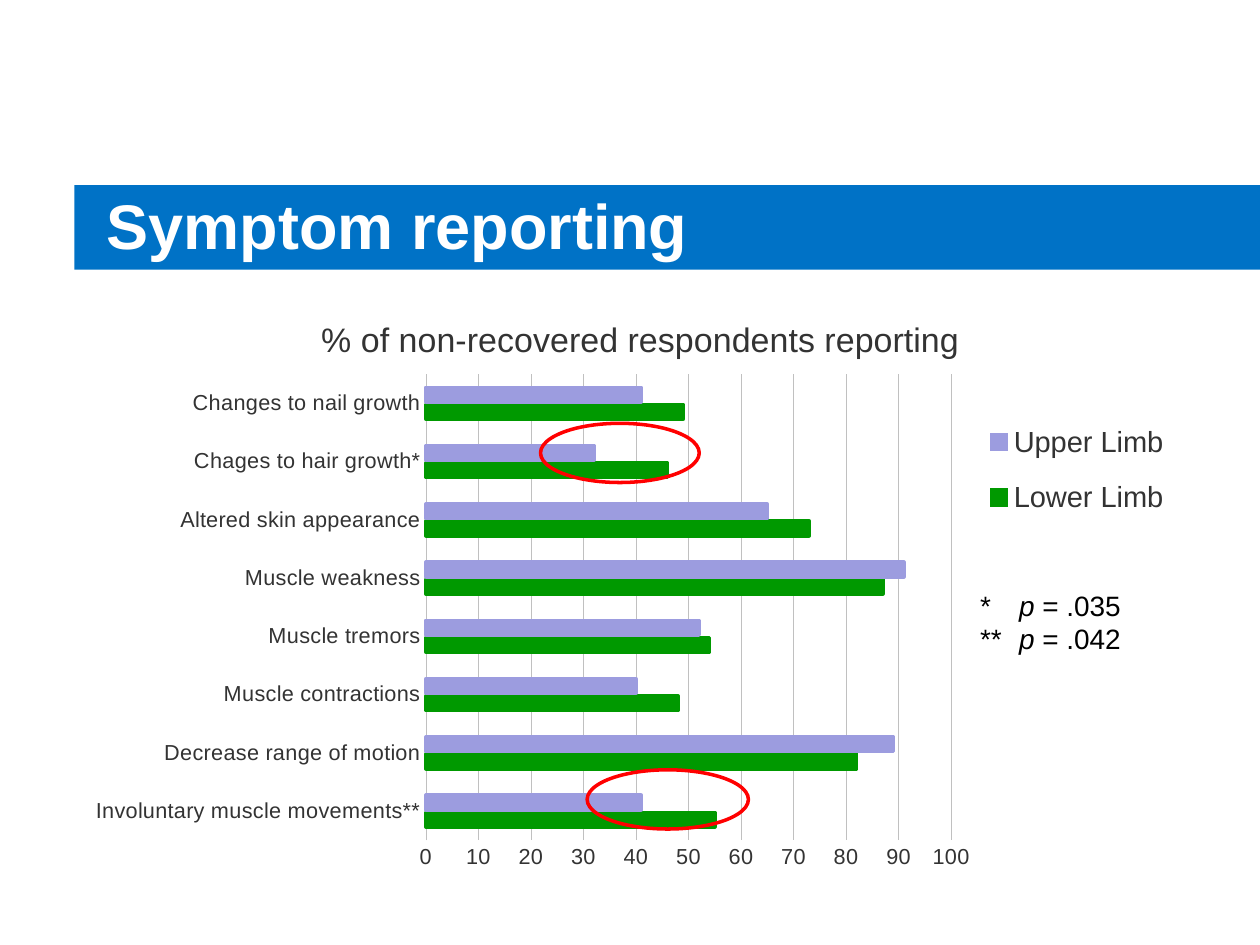
from lxml import etree
from pptx import Presentation, util as u
from pptx.chart.data import CategoryChartData
from pptx.dml.color import RGBColor
from pptx.enum import chart as ch, shapes, text
from pptx.oxml.ns import qn

# Content
TITLE = "Symptom reporting"
CHART_TITLE = "% of non-recovered respondents reporting"
SERIES = [("Lower Limb", "lower"), ("Upper Limb", "upper")]
SYMPTOMS = [  # bottom to top: symptom, lower limb, upper limb
    ("Involuntary muscle movements**", 55, 41),
    ("Decrease range of motion", 82, 89),
    ("Muscle contractions", 48, 40),
    ("Muscle tremors", 54, 52),
    ("Muscle weakness", 87, 91),
    ("Altered skin appearance", 73, 65),
    ("Chages to hair growth*", 46, 32),
    ("Changes to nail growth", 49, 41),
]
P_VALUES = [("*", ".035"), ("**", ".042")]

THEME = {
    "font": "Arial",
    "banner": "0072C6", "white": "FFFFFF", "ink": "000000", "label": "333333",
    "grid": "C0C0C0", "lower": "009900", "upper": "9C9CDF", "ring": "FF0000",
    "title": 36, "chart_title": 19.4, "legend": 16.6, "axis": 12.4, "note": 16,
}

# Places: left, top, width, height in inches
BANNER = (0.59, 1.47, 9.41, 0.67)
HEADING = (0.75, 1.47, 9.06, 0.62)
CHART = (0.59, 2.25, 8.9, 4.75)
PLOT = (3.38, 2.97, 4.17, 3.7)
LEGEND = (7.72, 3.2, 1.65, 1.06)
CHART_TITLE_AT = (2.5, 2.47)
RINGS = [(4.29, 3.36, 1.26, 0.47), (4.66, 6.11, 1.28, 0.47)]
NOTE = (7.68, 4.62, 1.36, 0.94)
NOTE_TAB = 0.31


def inches(place):
    return [u.Inches(n) for n in place]


def color(name):
    return RGBColor.from_string(THEME[name])


def style(font, size, ink, bold=False, italic=False):
    font.name, font.size = THEME["font"], u.Pt(THEME[size])
    font.color.rgb = color(ink)
    font.bold, font.italic = bold, italic


def add_run(paragraph, words, **look):
    run = paragraph.add_run()
    run.text = words
    style(run.font, **look)


def add_text(slide, place, lines, wrap=True, anchor="TOP", tab=None, **look):
    """Each line is a list of (words, italic) pairs."""
    frame = slide.shapes.add_textbox(*inches(place)).text_frame
    frame.word_wrap = wrap
    frame.vertical_anchor = text.MSO_ANCHOR[anchor]
    for i, line in enumerate(lines):
        paragraph = frame.add_paragraph() if i else frame.paragraphs[0]
        if tab:
            stops = etree.SubElement(paragraph._p.get_or_add_pPr(), qn("a:tabLst"))
            etree.SubElement(stops, qn("a:tab"), pos=str(u.Inches(tab)), algn="l")
        for words, italic in line:
            add_run(paragraph, words, italic=italic, **look)


def place_in_chart(element, place, after=None, inner=False):
    """Give a chart part a fixed place, as fractions of the chart."""
    for old in element.findall(qn("c:layout")):
        element.remove(old)
    layout = etree.Element(qn("c:layout"))
    manual = etree.SubElement(layout, qn("c:manualLayout"))
    left, top, width, height = CHART
    fractions = [(place[0] - left) / width, (place[1] - top) / height]
    fractions += [n / whole for n, whole in zip(place[2:], (width, height))]
    settings = [("layoutTarget", "inner")] if inner else []
    settings += [("xMode", "edge"), ("yMode", "edge")]
    settings += zip("xywh", (f"{n:.4f}" for n in fractions))
    for tag, value in settings:
        etree.SubElement(manual, qn("c:" + tag), val=value)
    before = element.find(qn(after)) if after else None
    element.insert(0 if before is None else element.index(before) + 1, layout)


def add_symptom_chart(slide):
    names, *columns = zip(*SYMPTOMS)
    data = CategoryChartData()
    data.categories = names
    for (limb, _), values in zip(SERIES, columns):
        data.add_series(limb, values)
    chart = slide.shapes.add_chart(
        ch.XL_CHART_TYPE.BAR_CLUSTERED, *inches(CHART), data).chart

    # Bars
    plot = chart.plots[0]
    plot.gap_width, plot.overlap, plot.vary_by_categories = 182, -18, False
    for bars, (_, fill) in zip(plot.series, SERIES):
        bars.format.fill.solid()
        bars.format.fill.fore_color.rgb = color(fill)
        bars.format.line.color.rgb = color(fill)
        bars.format.line.width = u.Pt(2.08)
    place_in_chart(chart._chartSpace.chart.plotArea, PLOT, inner=True)

    # Axes
    symptoms, percent = chart.category_axis, chart.value_axis
    for axis in (symptoms, percent):
        axis.major_tick_mark = axis.minor_tick_mark = ch.XL_TICK_MARK.NONE
        style(axis.tick_labels.font, "axis", "label")
    percent.minimum_scale, percent.maximum_scale, percent.major_unit = 0, 100, 10
    percent.has_major_gridlines = True
    percent.format.line.fill.background()
    for line in (symptoms.format.line, percent.major_gridlines.format.line):
        line.color.rgb = color("grid")
        line.width = u.Pt(0.25)

    # Chart title and legend
    chart.has_title = True
    add_run(chart.chart_title.text_frame.paragraphs[0], CHART_TITLE,
            size="chart_title", ink="label")
    place_in_chart(chart.chart_title._element, CHART_TITLE_AT, after="c:tx")
    chart.has_legend = True
    chart.legend.position = ch.XL_LEGEND_POSITION.RIGHT
    chart.legend.include_in_layout = False
    style(chart.legend.font, "legend", "label")
    place_in_chart(chart.legend._element, LEGEND, after="c:legendPos")


def main():
    deck = Presentation()
    deck.slide_width, deck.slide_height = u.Inches(10), u.Inches(7.5)
    slide = deck.slides.add_slide(deck.slide_layouts[6])

    # Heading on its banner
    banner = slide.shapes.add_shape(shapes.MSO_SHAPE.RECTANGLE, *inches(BANNER))
    banner.shadow.inherit = False
    banner.fill.solid()
    banner.fill.fore_color.rgb = color("banner")
    banner.line.fill.background()
    add_text(slide, HEADING, [[(TITLE, False)]], anchor="MIDDLE",
             size="title", ink="white", bold=True)

    add_symptom_chart(slide)

    # Rings around the significant differences
    for place in RINGS:
        ring = slide.shapes.add_shape(shapes.MSO_SHAPE.OVAL, *inches(place))
        ring.shadow.inherit = False
        ring.fill.background()
        ring.line.color.rgb = color("ring")
        ring.line.width = u.Pt(2)

    # Significance note
    note = [[(mark + "\t", False), ("p", True), (" = " + value, False)]
            for mark, value in P_VALUES]
    add_text(slide, NOTE, note, wrap=False, tab=NOTE_TAB, size="note", ink="ink")

    deck.save("out.pptx")


if __name__ == "__main__":
    main()
